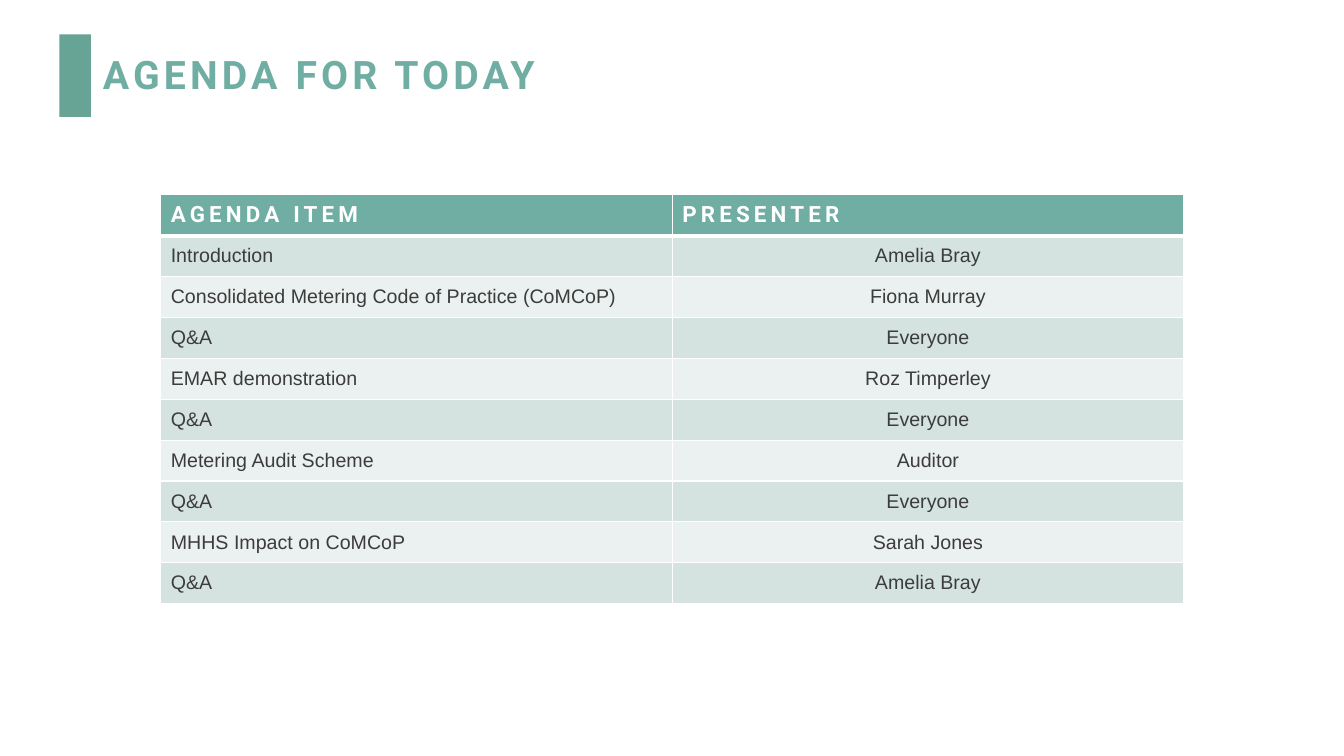
from pptx import Presentation
from pptx.dml.color import RGBColor as Rgb
from pptx.enum.shapes import MSO_SHAPE as Shape
from pptx.enum.text import MSO_ANCHOR as Anchor, PP_ALIGN as Align
from pptx.oxml import parse_xml
from pptx.oxml.ns import nsdecls
from pptx.util import Cm, Pt

HUES = {
    "bar": "68A495",
    "teal": "70ADA3",
    "ink": "3C3C3B",
    "white": "FFFFFF",
    "dark": "D5E3E0",
    "light": "EBF1F0",
}
FORMS = {
    "title": {"name": "Roboto", "size": Pt(28), "bold": True},
    "head": {"name": "Roboto", "size": Pt(16), "bold": True},
    "body": {"name": "Arial", "size": Pt(14), "bold": False},
}
AGENDA = [
    ("AGENDA ITEM", "PRESENTER"),
    ("Introduction", "Amelia Bray"),
    ("Consolidated Metering Code of Practice (CoMCoP)", "Fiona Murray"),
    ("Q&A", "Everyone"),
    ("EMAR demonstration", "Roz Timperley"),
    ("Q&A", "Everyone"),
    ("Metering Audit Scheme", "Auditor"),
    ("Q&A", "Everyone"),
    ("MHHS Impact on CoMCoP", "Sarah Jones"),
    ("Q&A", "Amelia Bray"),
]


class Deck:
    def __init__(self, wide, high):
        self.show = Presentation()
        self.show.slide_width, self.show.slide_height = Cm(wide), Cm(high)
        self.slide = self.show.slides.add_slide(self.show.slide_layouts[5])

    def hue(self, key):
        return Rgb.from_string(HUES[key])

    def label(self, frame, text, form, hue, align=Align.LEFT, track=0):
        para = frame.paragraphs[0]
        para.alignment = align
        run = para.add_run()
        run.text = text
        for key, value in FORMS[form].items():
            setattr(run.font, key, value)
        run.font.color.rgb = self.hue(hue)
        run._r.get_or_add_rPr().set("spc", str(track * 100))
        return para

    def bar(self, *box):
        rect = self.slide.shapes.add_shape(Shape.RECTANGLE, *map(Cm, box))
        rect.shadow.inherit = False
        rect.fill.solid()
        rect.fill.fore_color.rgb = self.hue("bar")
        rect.line.fill.background()

    def title(self, text, *box):
        title = self.slide.shapes.title
        title.left, title.top, title.width, title.height = map(Cm, box)
        frame = title.text_frame
        frame.word_wrap = True
        frame.vertical_anchor = Anchor.MIDDLE
        self.label(frame, text, "title", "teal", track=3).line_spacing = 0.9

    def edge(self, cell, side, width):
        cell._tc.get_or_add_tcPr().append(parse_xml(
            f'<a:ln{side} {nsdecls("a")} w="{Pt(width)}"><a:solidFill>'
            f'<a:srgbClr val="{HUES["white"]}"/></a:solidFill></a:ln{side}>'
        ))

    def cell(self, cell, text, row, col):
        head = row == 0
        for side in "LRTB":
            thick = (row, side) in ((0, "B"), (1, "T"))
            self.edge(cell, side, 3 if thick else 1)
        cell.fill.solid()
        band = "dark" if row % 2 else "light"
        cell.fill.fore_color.rgb = self.hue("teal" if head else band)
        cell.vertical_anchor = Anchor.MIDDLE
        if head:
            self.label(cell.text_frame, text, "head", "white", track=3)
        else:
            align = Align.CENTER if col else Align.LEFT
            self.label(cell.text_frame, text, "body", "ink", align)

    def table(self, rows, *box):
        grid = self.slide.shapes.add_table(
            len(rows), len(rows[0]), *map(Cm, box)).table
        for row, texts in enumerate(rows):
            for col, text in enumerate(texts):
                self.cell(grid.cell(row, col), text, row, col)


def main():
    deck = Deck(33.87, 19.05)
    deck.bar(1.5, 0.87, 0.79, 2.08)
    deck.title("AGENDA FOR TODAY", 2.34, 1.01, 25.78, 1.83)
    deck.table(AGENDA, 4.05, 4.91, 25.78, 10.3)
    deck.show.save("out.pptx")


if __name__ == "__main__":
    main()
